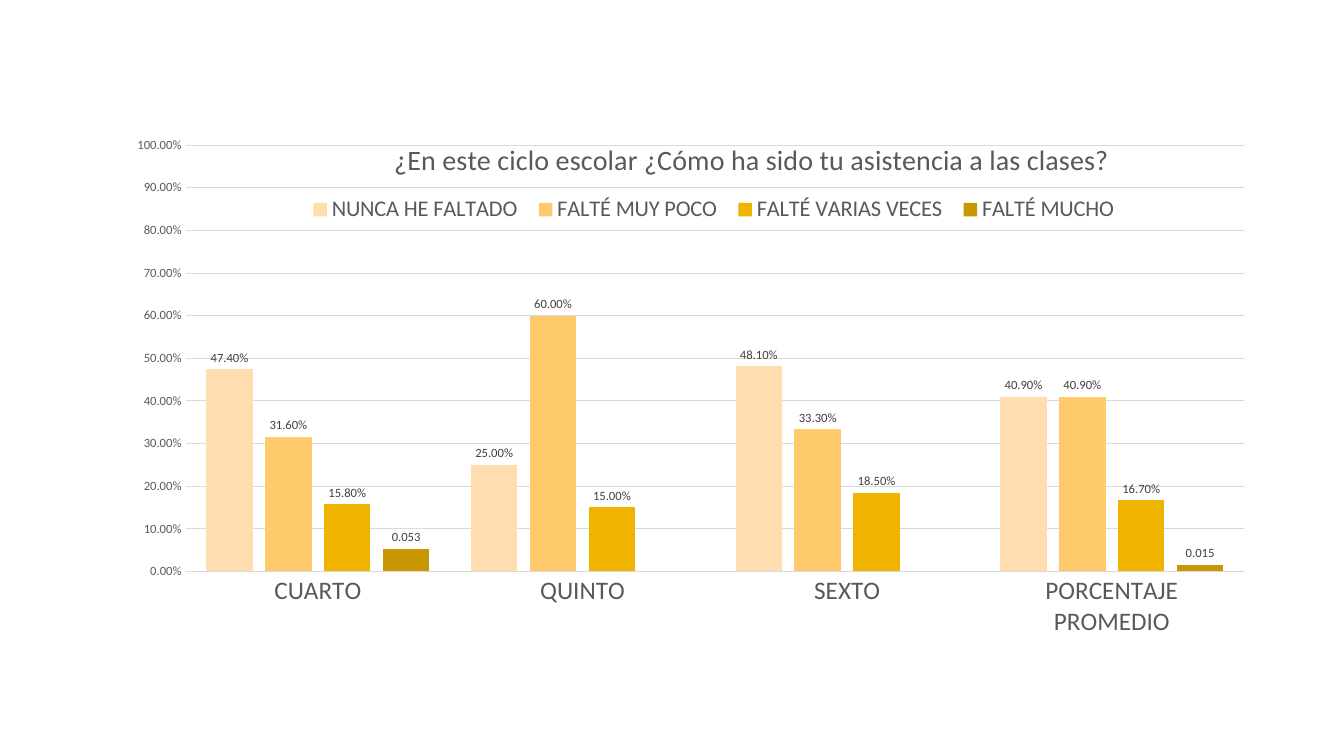
"""Build a slide with a clustered column chart of class attendance by grade."""
from dataclasses import dataclass
from typing import Any, Optional

from lxml import etree
from pptx import Presentation
from pptx import util as u
from pptx.chart.data import CategoryChartData
from pptx.dml.color import RGBColor
from pptx.enum import chart as ch
from pptx.oxml.ns import qn

PX = 9144
FONT = "Calibri"
GREY = RGBColor(0x59, 0x59, 0x59)
DARK = RGBColor(0x40, 0x40, 0x40)
RULE = RGBColor(0xD9, 0xD9, 0xD9)
CREAM = RGBColor(0xFF, 0xDD, 0xAF)
APRICOT = RGBColor(0xFF, 0xCA, 0x6C)
AMBER = RGBColor(0xEF, 0xB4, 0x00)
OCHRE = RGBColor(0xC9, 0x98, 0x00)

TITLE = "¿En este ciclo escolar ¿Cómo ha sido tu asistencia a las clases?"
GRADES = ["CUARTO", "QUINTO", "SEXTO", "PORCENTAJE PROMEDIO"]
PERCENT = "0.00%"


@dataclass(frozen=True)
class Answer:
    """One answer with its share in each grade."""
    name: str
    shares: tuple[Optional[float], ...]
    color: RGBColor
    label_format: str = PERCENT


@dataclass(frozen=True)
class Box:
    """A rectangle in px."""
    x: int
    y: int
    w: int
    h: int


ANSWERS = [
    Answer("NUNCA HE FALTADO", (0.474, 0.25, 0.481, 0.409), CREAM),
    Answer("FALTÉ MUY POCO", (0.316, 0.6, 0.333, 0.409), APRICOT),
    Answer("FALTÉ VARIAS VECES", (0.158, 0.15, 0.185, 0.167), AMBER),
    Answer("FALTÉ MUCHO", (0.053, None, None, 0.015), OCHRE, "General"),
]
FRAME = Box(113, 62, 1144, 625)
PLOT = Box(71, 82, 1050, 423)
TITLE_BOX = Box(273, 72, 710, 36)
LEGEND_BOX = Box(184, 130, 822, 32)


def apply(target: Any, **values: Any) -> None:
    """Set the given attributes on an object."""
    for name, value in values.items():
        setattr(target, name, value)


def style_font(font: Any, size: int, color: RGBColor = GREY) -> None:
    """Set face, size and colour of a font."""
    apply(font, name=FONT, size=u.Pt(size), bold=False)
    font.color.rgb = color


def style_line(line: Any) -> None:
    """Draw a thin rule."""
    line.color.rgb = RULE
    line.width = u.Pt(0.75)


def place(parent: Any, box: Box, index: int, inner: bool = False, sized: bool = True) -> None:
    """Give a chart part a fixed place within the chart frame."""
    for old in parent.findall(qn("c:layout")):
        parent.remove(old)
    layout = etree.Element(qn("c:layout"))
    manual = etree.SubElement(layout, qn("c:manualLayout"))
    values = {"layoutTarget": "inner"} if inner else {}
    values |= {"xMode": "edge", "yMode": "edge",
               "x": f"{box.x / FRAME.w:.4f}", "y": f"{box.y / FRAME.h:.4f}"}
    if sized:
        values |= {"w": f"{box.w / FRAME.w:.4f}", "h": f"{box.h / FRAME.h:.4f}"}
    for tag, value in values.items():
        etree.SubElement(manual, qn(f"c:{tag}")).set("val", value)
    parent.insert(index, layout)


def style_axes(chart: Any) -> None:
    """Format both axes and the gridlines."""
    for axis, size in ((chart.category_axis, 18), (chart.value_axis, 9)):
        apply(axis, major_tick_mark=ch.XL_TICK_MARK.NONE,
              minor_tick_mark=ch.XL_TICK_MARK.NONE)
        style_font(axis.tick_labels.font, size)
    style_line(chart.category_axis.format.line)
    axis = chart.value_axis
    apply(axis, minimum_scale=0, maximum_scale=1, major_unit=0.1, has_major_gridlines=True)
    apply(axis.tick_labels, number_format=PERCENT, number_format_is_linked=False)
    axis.format.line.fill.background()
    style_line(axis.major_gridlines.format.line)


def style_series(series: Any, answer: Answer) -> None:
    """Colour the columns of an answer and label them."""
    series.format.fill.solid()
    series.format.fill.fore_color.rgb = answer.color
    series.invert_if_negative = False
    labels = series.data_labels
    apply(labels, show_value=True, number_format=answer.label_format,
          number_format_is_linked=False, position=ch.XL_LABEL_POSITION.OUTSIDE_END)
    style_font(labels.font, 9, DARK)


def add_attendance_chart(slide: Any) -> None:
    """Add the attendance chart to a slide."""
    data = CategoryChartData(number_format=PERCENT)
    data.categories = GRADES
    for answer in ANSWERS:
        data.add_series(answer.name, answer.shares)
    bounds = (v * PX for v in (FRAME.x, FRAME.y, FRAME.w, FRAME.h))
    chart = slide.shapes.add_chart(ch.XL_CHART_TYPE.COLUMN_CLUSTERED, *bounds, data).chart
    chart.font.name = FONT
    chart.font.size = u.Pt(10)
    plot = chart.plots[0]
    apply(plot, gap_width=90, overlap=-27, vary_by_categories=False)
    for series, answer in zip(plot.series, ANSWERS):
        style_series(series, answer)
    style_axes(chart)

    p = chart.chart_title.text_frame.paragraphs[0]
    r = p.add_run()
    r.text = TITLE
    style_font(p.font, 20)
    style_font(r.font, 20)
    place(chart.chart_title._element, TITLE_BOX, 1, sized=False)

    chart.has_legend = True
    apply(chart.legend, position=ch.XL_LEGEND_POSITION.BOTTOM, include_in_layout=False)
    style_font(chart.legend.font, 16)
    place(chart.legend._element, LEGEND_BOX, 1)
    place(chart._chartSpace.chart.plotArea, PLOT, 0, inner=True)


def main() -> None:
    """Build and save the presentation."""
    prs = Presentation()
    apply(prs, slide_width=1333 * PX, slide_height=750 * PX)
    add_attendance_chart(prs.slides.add_slide(prs.slide_layouts[6]))
    prs.save("out.pptx")


if __name__ == "__main__":
    main()
